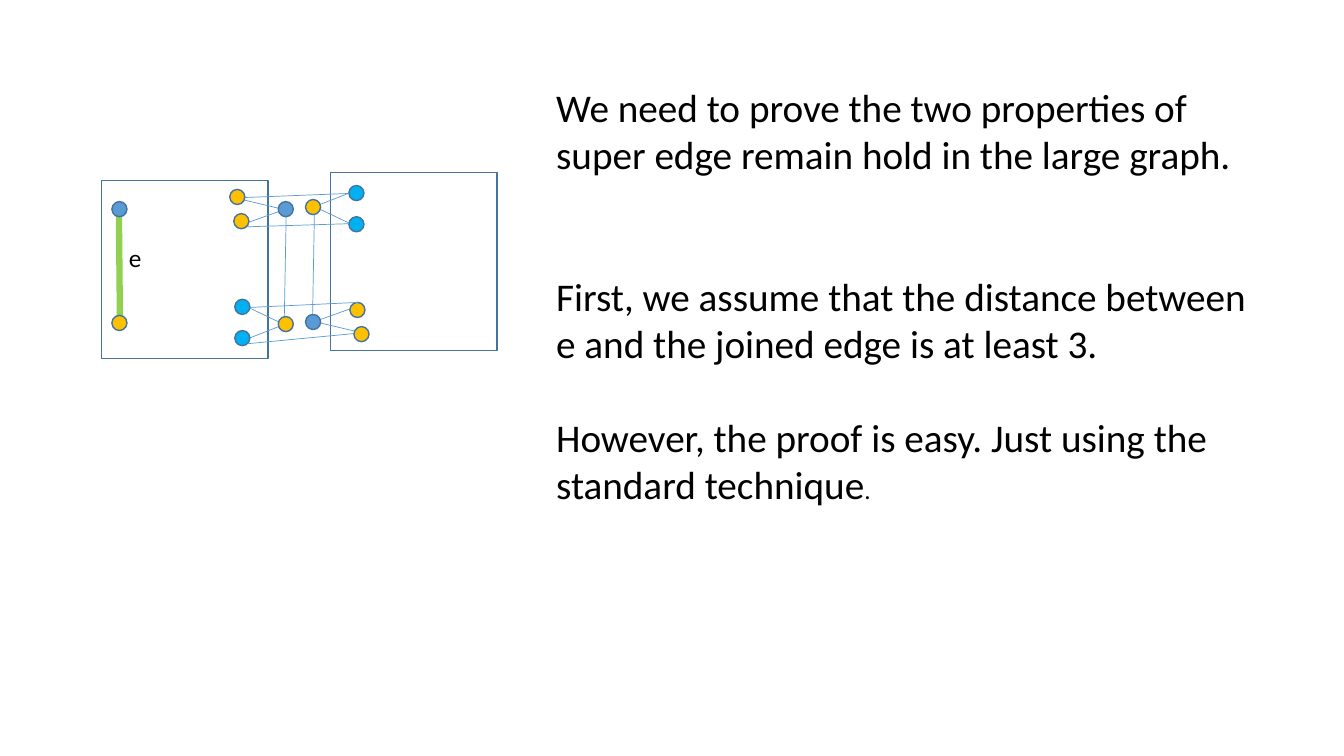
from lxml import etree
from pptx import Presentation
from pptx import util as u
from pptx.dml.color import RGBColor
from pptx.enum import shapes as sh, text as tx
from pptx.oxml.ns import qn

HUE = {"blue": "5B9BD5", "rim": "43739E", "gold": "FFC000",
       "sky": "00B0F0", "green": "92D050", "ink": "000000"}
DOT = 10.8
RECT = (0, 5.8, 118.8, 127.4)
TOP, LOW = (130.3, 26.6), (130.3, 108.7)
EDGES = [((131.8, 26.6), LOW), (TOP, (97.2, 18.7)), (TOP, (100.1, 37.4)),
         (LOW, (100.1, 94.3)), (LOW, (104.4, 118.8))]
NODES = [(126, 20.9, "blue"), (126, 103, "gold"), (95, 113, "sky"),
         (95, 90.7, "sky"), (94.3, 29.5, "gold"), (91.4, 12.2, "gold")]
LINKS = [((102.2, 18), (176.4, 15.1)), ((103.7, 38.9), (176.4, 36.7)),
         ((105.8, 96.5), (182.9, 92.9)), ((104.4, 122.4), (180, 115.2))]
PARAS = [
    ("We need to prove the two properties of super edge remain hold in the large graph.", "", 67.3),
    ("First, we assume that the distance between e and the joined edge is at least 3.", "", 33.7),
    ("However, the proof is easy. Just using the standard technique", ".", 0),
]


def rgb(name):
    return RGBColor.from_string(HUE[name])


def put(obj, form):
    for key, val in form.items():
        setattr(obj, key, val)


def shape(parts, kind, box, fill=None):
    item = parts.add_shape(kind, *map(u.Pt, box))
    item.shadow.inherit = False
    if fill:
        item.fill.solid()
        item.fill.fore_color.rgb = rgb(fill)
    else:
        item.fill.background()
    item.line.color.rgb = rgb("rim")
    item.line.width = u.Pt(1)


def line(parts, ends, hue="blue", width=0.5):
    (ax, ay), (bx, by) = ends
    item = parts.add_connector(sh.MSO_CONNECTOR.STRAIGHT, *map(u.Pt, (ax, ay, bx, by)))
    item.line.color.rgb = rgb(hue)
    item.line.width = u.Pt(width)
    etree.SubElement(item._element.spPr, qn("a:effectLst"))


def frame(parts, box):
    body = parts.add_textbox(*map(u.Pt, box)).text_frame
    put(body, {"word_wrap": True, "auto_size": tx.MSO_AUTO_SIZE.NONE})
    return body


def write(para, words, size):
    run = para.add_run()
    run.text = words
    put(run.font, {"name": "Calibri", "size": u.Pt(size)})
    run.font.color.rgb = rgb("ink")


def half(parts, box, turn):
    left, top, wide, high = box

    def spot(x, y, w=0, h=0):
        if turn:
            x, y = wide - x - w, high - y - h
        return left + x, top + y

    shape(parts, sh.MSO_SHAPE.RECTANGLE, spot(*RECT) + RECT[2:])
    for a, b in EDGES:
        line(parts, (spot(*a), spot(*b)))
    for x, y, hue in NODES:
        shape(parts, sh.MSO_SHAPE.OVAL, spot(x, y, DOT, DOT) + (DOT, DOT), hue)


def graph(slide, box):
    left, top = box[:2]
    parts = slide.shapes.add_group_shape().shapes
    for turn in (False, True):
        half(parts, box, turn)
    for ends in LINKS:
        line(parts, [(left + x, top + y) for x, y in ends])
    line(parts, ((left + 12.2, top + 25.9), (left + 13, top + 108)), "green", 4.5)
    for y, hue in ((20.9, "blue"), (102.2, "gold")):
        shape(parts, sh.MSO_SHAPE.OVAL, (left + 7.2, top + y, DOT, DOT), hue)
    label = frame(parts, (left + 12.2, top + 46.1, 43.9, 28.8))
    write(label.paragraphs[0], "e", 18)


def proof(slide, box):
    body = frame(slide.shapes, box)
    for num, (words, tail, gap) in enumerate(PARAS):
        para = body.add_paragraph() if num else body.paragraphs[0]
        para.space_after = u.Pt(gap)
        write(para, words, 28)
        if tail:
            write(para, tail, 18)


def main():
    deck = Presentation()
    put(deck, {"slide_width": u.Pt(960), "slide_height": u.Pt(540)})
    slide = deck.slides.add_slide(deck.slide_layouts[6])
    graph(slide, (72.7, 123.1, 282.3, 133.2))
    proof(slide, (390.2, 56.2, 509, 312.5))
    deck.save("out.pptx")


if __name__ == "__main__":
    main()
